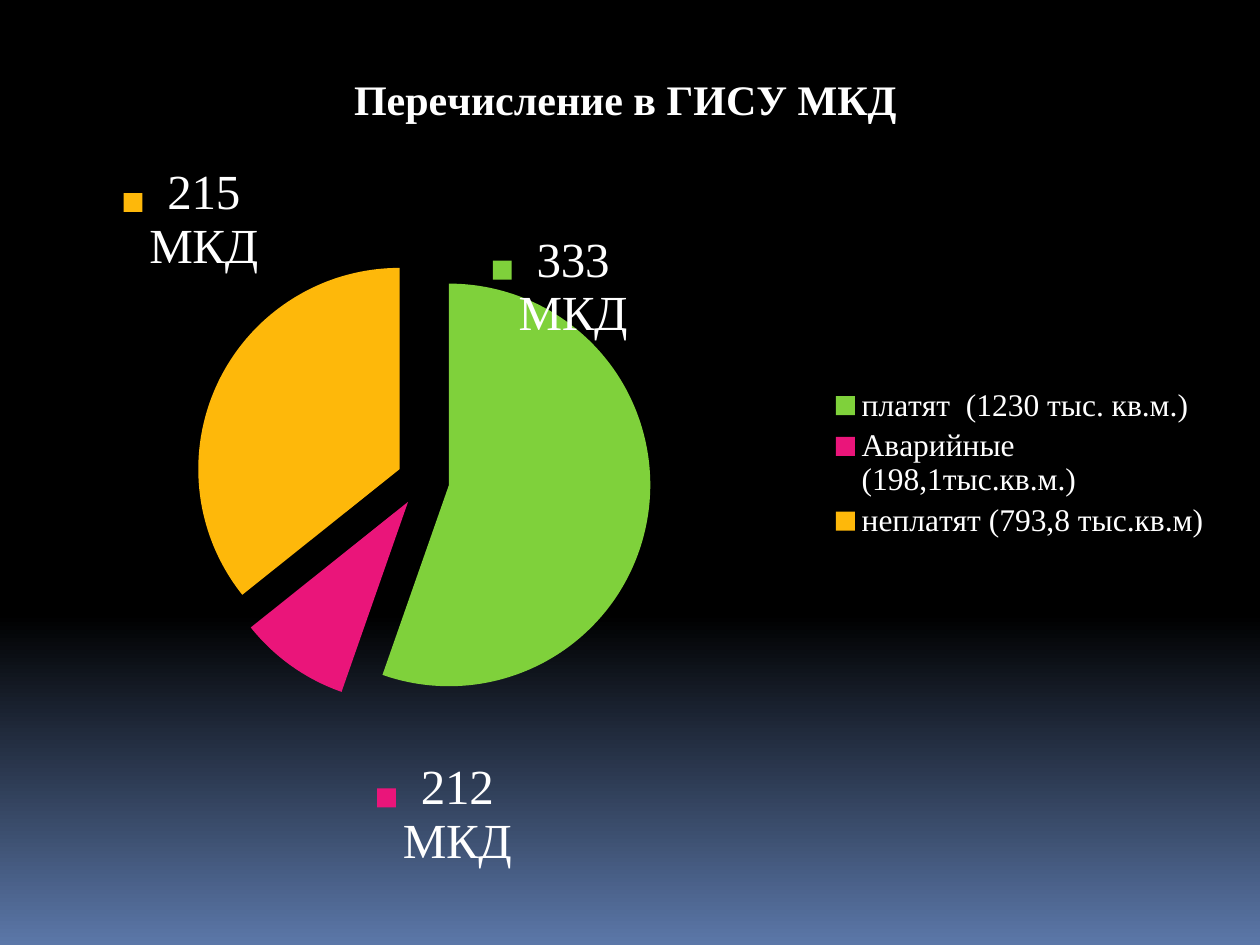
from copy import deepcopy
from typing import NamedTuple, Optional

from lxml.etree import SubElement
from pptx import Presentation
from pptx.chart.data import CategoryChartData
from pptx.dml.color import RGBColor
from pptx.enum.chart import XL_CHART_TYPE as ChartType
from pptx.enum.chart import XL_LABEL_POSITION as LabelPosition
from pptx.enum.chart import XL_LEGEND_POSITION as LegendPosition
from pptx.oxml import parse_xml
from pptx.oxml.ns import nsdecls, qn
from pptx.util import Pt

SERIF = "Times New Roman"
WHITE = "FFFFFF"
EXPLOSION = 13
LABEL_SIZE = (
    f'<c:extLst {nsdecls("c")}>'
    '<c:ext uri="{CE6537A1-D6FC-4f65-9D91-7224C49458BB}"'
    ' xmlns:c15="http://schemas.microsoft.com/office/drawing/2012/chart">'
    '<c15:layout><c:manualLayout><c:w val="0.13"/><c:h val="0.13"/>'
    "</c:manualLayout></c15:layout></c:ext></c:extLst>"
)


class Slice(NamedTuple):
    category: str
    area: float
    color: str
    label: str
    label_dx: float
    label_dy: float


class Stop(NamedTuple):
    position: float
    color: str


SLICES = [
    Slice("платят  (1230 тыс. кв.м.)", 1230, "7FD13B", "333 МКД", 0.01, -0.25),
    Slice("Аварийные (198,1тыс.кв.м.)", 198.1, "EA157A", "212 МКД", 0.08, 0.27),
    Slice("неплатят (793,8 тыс.кв.м)", 793.8, "FEB80A", "215 МКД", -0.1, -0.24),
]
BACKGROUND = [Stop(0, "000000"), Stop(0.65, "000000"), Stop(1, "5B77A8")]


def rgb(value: str) -> RGBColor:
    return RGBColor.from_string(value)


def style_font(font, size: float, bold: bool = False, name: str = SERIF) -> None:
    font.name = name
    font.size = Pt(size)
    font.bold = bold
    font.color.rgb = rgb(WHITE)


def manual_layout(x: float, y: float, w: Optional[float] = None,
                  h: Optional[float] = None, absolute: bool = True,
                  inner: bool = False):
    layout = parse_xml(f"<c:layout {nsdecls('c')}><c:manualLayout/></c:layout>")
    settings = [("layoutTarget", "inner")] if inner else []
    if absolute:
        settings += [("xMode", "edge"), ("yMode", "edge")]
    settings += [("x", x), ("y", y)]
    if w is not None and h is not None:
        settings += [("w", w), ("h", h)]
    for tag, value in settings:
        SubElement(layout[0], qn(f"c:{tag}")).set("val", str(value))
    return layout


def place(parent, layout, before: str) -> None:
    for old in parent.findall(qn("c:layout")):
        parent.remove(old)
    parent.find(qn(f"c:{before}")).addprevious(layout)


def paint_background(slide, stops: list[Stop]) -> None:
    fill = slide.background.fill
    fill.gradient()
    fill.gradient_angle = 270
    stop_list = slide.element.xpath(".//p:bgPr//a:gsLst")[0]
    while len(stop_list) < len(stops):
        stop_list.append(deepcopy(stop_list[-1]))
    for target, stop in zip(fill.gradient_stops, stops):
        target.color.rgb = rgb(stop.color)
        target.position = stop.position


def draw_slice(series, series_xml, index: int, part: Slice) -> None:
    point = series.points[index]
    point.format.fill.solid()
    point.format.fill.fore_color.rgb = rgb(part.color)
    point.format.line.fill.background()

    label = point.data_label
    label.text_frame.text = part.label
    label.text_frame.word_wrap = True
    style_font(label.text_frame.paragraphs[0].runs[0].font, 28)
    style_font(label.font, 28)
    label.position = LabelPosition.CENTER

    point_xml = series_xml.xpath(f"c:dPt[c:idx/@val='{index}']")[0]
    explosion = parse_xml(f'<c:explosion {nsdecls("c")} val="{EXPLOSION}"/>')
    point_xml.find(qn("c:spPr")).addprevious(explosion)
    label_xml = series_xml.xpath(f"c:dLbls/c:dLbl[c:idx/@val='{index}']")[0]
    label_xml.find(qn("c:showLegendKey")).set("val", "1")
    label_xml.xpath("c:txPr/a:bodyPr")[0].set("wrap", "square")
    place(label_xml, manual_layout(part.label_dx, part.label_dy, absolute=False), "tx")
    label_xml.append(parse_xml(LABEL_SIZE))


def hide_leader_lines(labels_xml) -> None:
    leader = labels_xml.find(qn("c:showLeaderLines"))
    if leader is None:
        leader = SubElement(labels_xml, qn("c:showLeaderLines"))
    leader.set("val", "0")


def draw_pie(slide, title: str, slices: list[Slice]) -> None:
    data = CategoryChartData()
    data.categories = [part.category for part in slices]
    data.add_series("Series 1", [part.area for part in slices])
    chart = slide.shapes.add_chart(
        ChartType.PIE, Pt(22.5), Pt(22.5), Pt(675), Pt(489.6), data).chart
    style_font(chart.font, 18, name="Cabin")

    chart.has_title = True
    heading = chart.chart_title.text_frame
    heading.text = title
    style_font(heading.paragraphs[0].runs[0].font, 24, bold=True)
    chart.chart_title.include_in_layout = False

    chart.has_legend = True
    chart.legend.position = LegendPosition.RIGHT
    chart.legend.include_in_layout = False
    style_font(chart.legend.font, 18)

    plot = chart.plots[0]
    plot.vary_by_categories = True
    series = plot.series[0]
    labels = series.data_labels
    labels.show_value = True
    labels.show_legend_key = True
    labels.position = LabelPosition.CENTER
    style_font(labels.font, 28)

    chart_xml = chart.element.find(qn("c:chart"))
    series_xml = chart_xml.xpath(".//c:ser")[0]
    for index, part in enumerate(slices):
        draw_slice(series, series_xml, index, part)
    hide_leader_lines(series_xml.find(qn("c:dLbls")))

    place(chart_xml.find(qn("c:title")), manual_layout(0.26, 0.03), "overlay")
    place(chart_xml.find(qn("c:legend")), manual_layout(0.67, 0.4, 0.32, 0.19), "overlay")
    place(chart_xml.find(qn("c:plotArea")),
          manual_layout(0.15, 0.28, 0.35, 0.47, inner=True), "pieChart")


def main() -> None:
    presentation = Presentation()
    presentation.slide_width = Pt(720)
    presentation.slide_height = Pt(540)
    slide = presentation.slides.add_slide(presentation.slide_layouts[6])
    paint_background(slide, BACKGROUND)
    draw_pie(slide, "Перечисление в ГИСУ МКД", SLICES)
    presentation.save("out.pptx")


if __name__ == "__main__":
    main()
